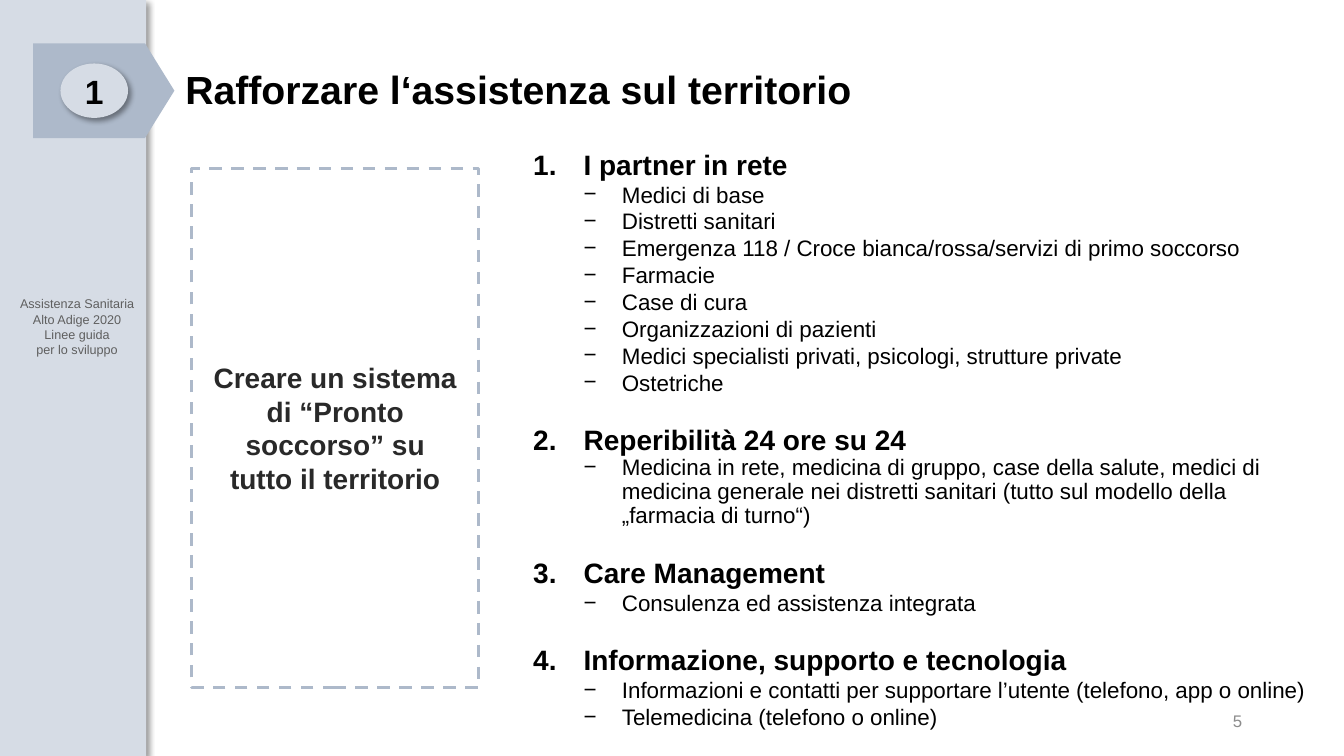
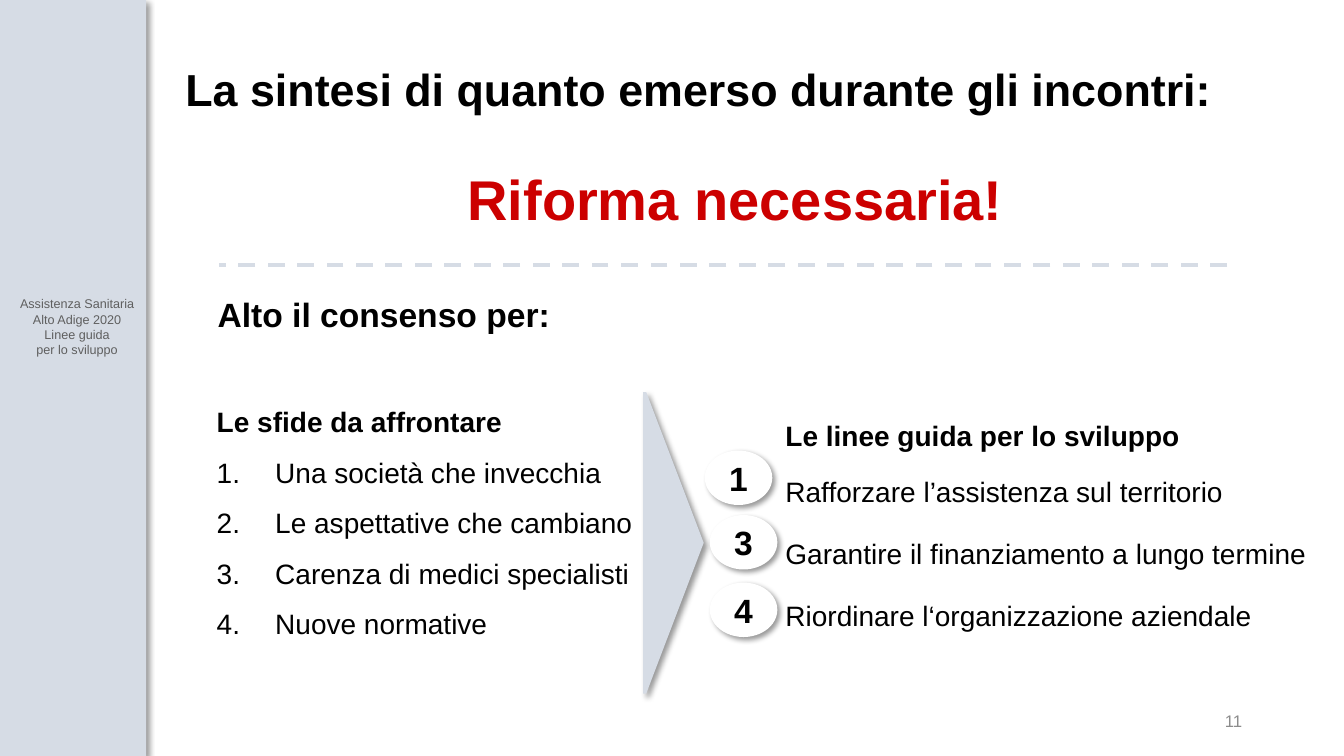
"""Build two slides on the health care reform in Alto Adige."""
from dataclasses import dataclass

from lxml import etree
from pptx import Presentation
from pptx import util as u
from pptx.dml.color import RGBColor
from pptx.enum import dml, shapes, text
from pptx.oxml import ns

INK = {
    "pale": "D6DCE5",
    "steel": "ADB9CA",
    "black": "000000",
    "dark": "292929",
    "gray": "5F5F5F",
    "mute": "8C8C8C",
    "red": "CC0000",
    "white": "FFFFFF",
}
FONT = "Arial"
ALIGN = {"l": text.PP_ALIGN.LEFT, "c": text.PP_ALIGN.CENTER, "r": text.PP_ALIGN.RIGHT}
FORM = shapes.MSO_SHAPE


@dataclass(frozen=True)
class Box:
    left: float
    top: float
    width: float
    height: float

    def span(self) -> tuple:
        return tuple(u.Inches(v) for v in (self.left, self.top, self.width, self.height))


@dataclass(frozen=True)
class Line:
    text: str
    size: float = 20
    bold: bool = False
    mark: str = ""
    level: int = 0
    left: float = 0
    hang: float = 0
    pitch: float | u.Length | None = None
    before: float = 0
    after: float = 0


@dataclass(frozen=True)
class Badge:
    label: str
    left: float
    top: float
    fill: str = "white"


@dataclass(frozen=True)
class Topic:
    head: str
    points: tuple[str, ...]
    pitch: float | None = None


def hue(name: str) -> RGBColor:
    return RGBColor.from_string(INK[name])


def node(parent, tag: str, **attrs):
    return etree.SubElement(parent, ns.qn(tag), attrs)


def bullet(para, line: Line) -> None:
    props = para._p.get_or_add_pPr()
    props.set("marL", str(u.Inches(line.left)))
    props.set("indent", str(-u.Inches(line.hang)))
    if line.mark == "1.":
        node(props, "a:buFont", typeface=FONT)
        node(props, "a:buAutoNum", type="arabicPeriod")
    elif line.mark:
        node(props, "a:buFont", typeface=FONT)
        node(props, "a:buChar", char=line.mark)
    else:
        node(props, "a:buNone")


def write(shape, lines: list[Line], *, color: str = "black", align: str = "l",
          middle: bool = False, inset: tuple[float, float] = (0.1, 0.1)) -> None:
    frame = shape.text_frame
    frame.word_wrap = True
    frame.auto_size = text.MSO_AUTO_SIZE.NONE
    frame.vertical_anchor = text.MSO_ANCHOR.MIDDLE if middle else text.MSO_ANCHOR.TOP
    frame.margin_left, frame.margin_right = (u.Inches(v) for v in inset)
    for i, line in enumerate(lines):
        para = frame.add_paragraph() if i else frame.paragraphs[0]
        para.level = line.level
        bullet(para, line)
        para.alignment = ALIGN[align]
        para.space_before, para.space_after = u.Pt(line.before), u.Pt(line.after)
        if line.pitch:
            para.line_spacing = line.pitch
        run = para.add_run()
        run.text = line.text
        run.font.name, run.font.size, run.font.bold = FONT, u.Pt(line.size), line.bold
        run.font.color.rgb = hue(color)


def label(slide, box: Box, lines: list[Line], **form) -> None:
    write(slide.shapes.add_textbox(*box.span()), lines, **form)


def draw(slide, kind, box: Box, fill: str = "", *, shade: bool = False,
         bend: float | None = None):
    shape = slide.shapes.add_shape(kind, *box.span())
    shape.shadow.inherit = False
    shape.line.fill.background()
    if fill:
        shape.fill.solid()
        shape.fill.fore_color.rgb = hue(fill)
    else:
        shape.fill.background()
    if bend is not None:
        shape.adjustments[0] = bend
    if shade:
        glow = shape._element.spPr.find(ns.qn("a:effectLst"))
        outer = node(glow, "a:outerShdw", blurRad=str(u.Pt(4)), dist=str(u.Pt(3)),
                     dir="2700000", algn="tl", rotWithShape="0")
        tint = node(outer, "a:srgbClr", val=INK["black"])
        node(tint, "a:alpha", val="40000")
    return shape


def dash(line, color: str, width: float) -> None:
    line.color.rgb = hue(color)
    line.width = u.Pt(width)
    line.dash_style = dml.MSO_LINE.DASH


def stamp(slide, badge: Badge) -> None:
    oval = draw(slide, FORM.OVAL, Box(badge.left, badge.top, 0.67, 0.54), badge.fill, shade=True)
    write(oval, [Line(badge.label, 24, True)], align="c", middle=True)


def base(deck, title: str, size: float, page: int):
    slide = deck.slides.add_slide(deck.slide_layouts[6])
    draw(slide, FORM.RECTANGLE, Box(0, 0, 1.45, 7.5), "pale", shade=True)
    side = ("Assistenza Sanitaria Alto Adige 2020", "Linee guida", "per lo sviluppo")
    label(slide, Box(0, 2.89, 1.53, 0.85), [Line(s, 9) for s in side], color="gray", align="c")
    label(slide, Box(9.42, 6.95, 3, 0.4), [Line(str(page), 12)],
          color="mute", align="r", middle=True)
    label(slide, Box(1.74, 0.4, 11.11, 1.03), [Line(title, size, True, pitch=0.9)], middle=True)
    return slide


def care(deck) -> None:
    slide = base(deck, "Rafforzare l‘assistenza sul territorio", 28, 5)
    frame = draw(slide, FORM.RECTANGLE, Box(1.9, 1.67, 2.85, 5.15))
    dash(frame.line, "steel", 2.25)
    goal = ("Creare un sistema di “Pronto soccorso” su", "tutto il territorio")
    write(frame, [Line(g, bold=True) for g in goal], color="dark", align="c", middle=True)
    topics = [
        Topic("I partner in rete", (
            "Medici di base",
            "Distretti sanitari",
            "Emergenza 118 / Croce bianca/rossa/servizi di primo soccorso",
            "Farmacie",
            "Case di cura",
            "Organizzazioni di pazienti",
            "Medici specialisti privati, psicologi, strutture private",
            "Ostetriche")),
        Topic("Reperibilità 24 ore su 24", (
            "Medicina in rete, medicina di gruppo, case della salute, medici di medicina "
            "generale nei distretti sanitari (tutto sul modello della „farmacia di turno“)",), 0.9),
        Topic("Care Management", ("Consulenza ed assistenza integrata",)),
        Topic("Informazione, supporto e tecnologia", (
            "Informazioni e contatti per supportare l’utente (telefono, app o online)",
            "Telemedicina (telefono o online)")),
    ]
    lines = []
    for i, topic in enumerate(topics):
        lines.append(Line(topic.head, bold=True, mark="1.", left=0.5, hang=0.5,
                          before=19.2 if i else 0))
        lines += [Line(p, 16, mark="−", level=1, left=0.88, hang=0.38, pitch=topic.pitch)
                  for p in topic.points]
    label(slide, Box(5.19, 1.41, 8, 5.9), lines)
    draw(slide, FORM.PENTAGON, Box(0.33, 0.43, 1.4, 0.94), "steel", bend=0.31)
    stamp(slide, Badge("1", 0.6, 0.63, "pale"))


def recap(deck) -> None:
    slide = base(deck, "La sintesi di quanto emerso durante gli incontri:", 32, 11)
    draw(slide, FORM.PENTAGON, Box(6.38, 3.89, 0.6, 2.99), "pale", shade=True, bend=0.95)
    inset = (0.2, 0.16)
    label(slide, Box(2.1, 1.68, 10.34, 0.81),
          [Line("Riforma necessaria!", 40, True, pitch=u.Pt(31))],
          color="red", align="c", middle=True, inset=inset)
    rule = slide.shapes.add_connector(
        shapes.MSO_CONNECTOR.STRAIGHT, *(u.Inches(v) for v in (12.17, 2.63, 2.17, 2.63)))
    dash(rule.line, "pale", 3)
    node(rule._element.spPr, "a:effectLst")
    label(slide, Box(2.06, 2.76, 6.73, 0.77),
          [Line("Alto il consenso per:", 24, True, pitch=0.9)], middle=True)
    tasks = ("Una società che invecchia", "Le aspettative che cambiano",
             "Carenza di medici specialisti", "Nuove normative")
    label(slide, Box(1.95, 3.8, 4.64, 3.22),
          [Line("Le sfide da affrontare", bold=True, pitch=1.5)]
          + [Line(t, mark="1.", left=0.58, hang=0.58, pitch=1.5) for t in tasks], inset=inset)
    guides = ("Rafforzare l’assistenza sul territorio",
              "Garantire il finanziamento a lungo termine",
              "Riordinare l‘organizzazione aziendale")
    label(slide, Box(7.59, 4.08, 5.6, 2.6),
          [Line("Le linee guida per lo sviluppo", bold=True, pitch=u.Pt(26), after=14)]
          + [Line(g, pitch=u.Pt(26), after=18) for g in guides], inset=inset)
    for badge in (Badge("1", 6.99, 4.47), Badge("3", 7.04, 5.11), Badge("4", 7.04, 5.78)):
        stamp(slide, badge)


def main() -> None:
    deck = Presentation()
    deck.slide_width, deck.slide_height = u.Inches(13.33), u.Inches(7.5)
    care(deck)
    recap(deck)
    deck.save("out.pptx")


if __name__ == "__main__":
    main()
